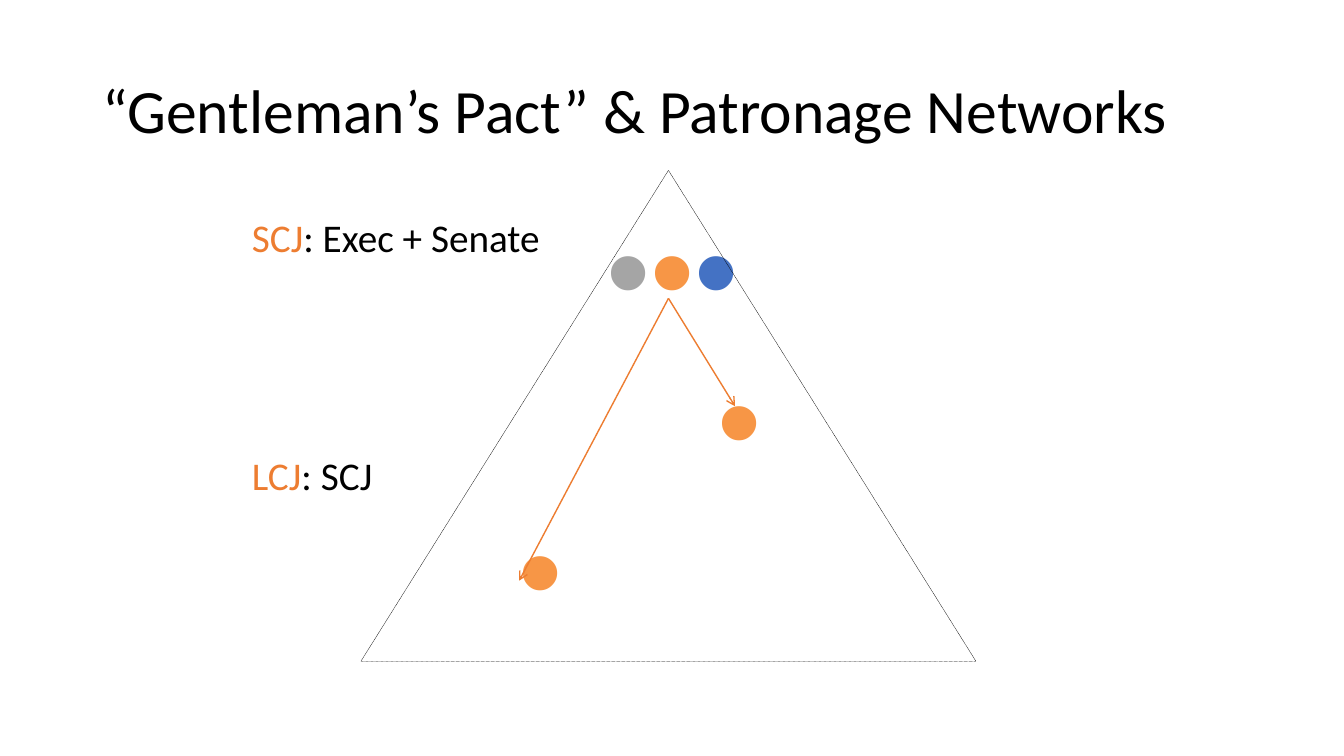
from pptx import Presentation
from pptx.dml.color import RGBColor
from pptx.enum.dml import MSO_LINE
from pptx.enum.shapes import MSO_CONNECTOR, MSO_SHAPE
from pptx.enum.text import MSO_ANCHOR, PP_ALIGN
from pptx.oxml.ns import qn
from pptx.util import Inches, Pt
from lxml import etree

BLACK = RGBColor(0x00, 0x00, 0x00)
GRAY = RGBColor(0xA5, 0xA5, 0xA5)
AMBER = RGBColor(0xF7, 0x96, 0x46)
BLUE = RGBColor(0x44, 0x72, 0xC4)
ORANGE = RGBColor(0xED, 0x7D, 0x31)

# Each row of dots: colours, and shift of the row from the centre in inches
DOT_ROWS = [([GRAY, AMBER, BLUE], 0), ([AMBER], 0.67), ([AMBER], -1.31)]


def add_text_box(slide, left, top, width, height):
    text_box = slide.shapes.add_textbox(
        Inches(left), Inches(top), Inches(width), Inches(height))
    text_box.text_frame.word_wrap = True
    return text_box.text_frame


def add_runs(paragraph, parts, font_name, size):
    paragraph.font.name = font_name
    paragraph.font.size = Pt(size)
    for text, color in parts:
        run = paragraph.add_run()
        run.text = text
        run.font.color.rgb = color


def add_title(slide, text):
    frame = add_text_box(slide, 0.92, 0.4, 11.5, 1.45)
    frame.vertical_anchor = MSO_ANCHOR.MIDDLE
    frame.paragraphs[0].line_spacing = 0.9
    add_runs(frame.paragraphs[0], [(text, BLACK)], "Calibri", 44)


def add_dots(slide):
    frame = add_text_box(slide, 0.92, 2, 11.5, 4.76)
    for index, (colors, shift) in enumerate(DOT_ROWS):
        paragraph = frame.add_paragraph() if index else frame.paragraphs[0]
        paragraph.alignment = PP_ALIGN.CENTER
        paragraph.line_spacing = 0.9
        paragraph.space_before = Pt(10)
        add_runs(paragraph, [("•", color) for color in colors], "Arial", 90)
        # A margin on one side moves a centred row by half its width
        margin = "marL" if shift > 0 else "marR"
        paragraph._p.get_or_add_pPr().set(margin, str(Inches(2 * abs(shift))))


def add_pyramid(slide):
    pyramid = slide.shapes.add_shape(
        MSO_SHAPE.ISOSCELES_TRIANGLE,
        Inches(3.58), Inches(1.69), Inches(6.1), Inches(4.87))
    pyramid.shadow.inherit = False
    pyramid.fill.background()
    pyramid.line.color.rgb = BLACK
    pyramid.line.width = Pt(0.25)
    pyramid.line.dash_style = MSO_LINE.ROUND_DOT


def add_label(slide, top, width, court, appointers):
    frame = add_text_box(slide, 2.4, top, width, 0.57)
    parts = [(court, ORANGE), (f": {appointers}", BLACK)]
    add_runs(frame.paragraphs[0], parts, "Calibri", 28)


def add_arrow(slide, end_x, end_y):
    arrow = slide.shapes.add_connector(
        MSO_CONNECTOR.STRAIGHT,
        Inches(6.63), Inches(2.96), Inches(end_x), Inches(end_y))
    arrow.line.color.rgb = ORANGE
    arrow.line.width = Pt(1)
    etree.SubElement(arrow.line._get_or_add_ln(), qn("a:tailEnd"), type="arrow")
    etree.SubElement(arrow._element.spPr, qn("a:effectLst"))


def main():
    presentation = Presentation()
    presentation.slide_width = Inches(13.33)
    presentation.slide_height = Inches(7.5)
    slide = presentation.slides.add_slide(presentation.slide_layouts[6])

    # Title and dots
    add_title(slide, "“Gentleman’s Pact” & Patronage Networks")
    add_dots(slide)

    # Pyramid with its levels
    add_pyramid(slide)
    add_label(slide, 2.07, 3.3, "SCJ", "Exec + Senate")
    add_label(slide, 4.43, 1.73, "LCJ", "SCJ")

    # Patronage links
    add_arrow(slide, 5.15, 5.76)
    add_arrow(slide, 7.29, 4.03)

    presentation.save("out.pptx")


if __name__ == "__main__":
    main()
